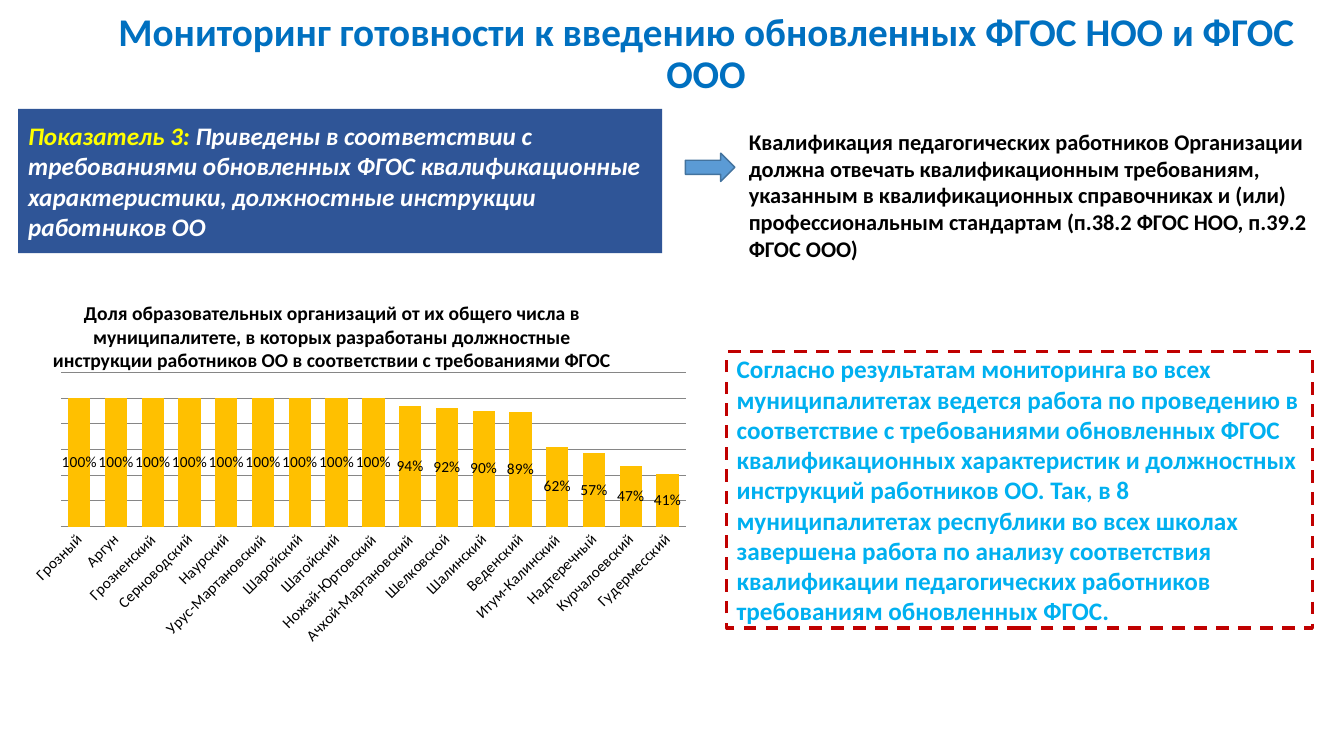
import pptx
import pptx.chart.data
import pptx.dml.color
import pptx.enum.chart
import pptx.enum.dml
import pptx.enum.shapes
import pptx.enum.text
import pptx.oxml
import pptx.util
from pptx.util import Pt

TITLE = "Мониторинг готовности к введению обновленных ФГОС НОО и ФГОС ООО"
INDICATOR = [
    ("Показатель 3: ", "yellow"),
    ("Приведены в соответствии с требованиями обновленных ФГОС квалификационные "
     "характеристики, должностные инструкции работников ОО", "white"),
]
REQUIREMENT = (
    "Квалификация педагогических работников Организации должна отвечать "
    "квалификационным требованиям, указанным в квалификационных справочниках и (или) "
    "профессиональным стандартам (п.38.2 ФГОС НОО, п.39.2 ФГОС ООО)"
)
CONCLUSION = (
    "Согласно результатам мониторинга во всех муниципалитетах ведется работа по "
    "проведению в соответствие с требованиями обновленных ФГОС квалификационных "
    "характеристик и должностных инструкций работников ОО. Так, в 8 муниципалитетах "
    "республики во всех школах завершена работа по анализу соответствия квалификации "
    "педагогических работников требованиям обновленных ФГОС."
)
CHART_TITLE = (
    "Доля образовательных организаций от их общего числа в муниципалитете, в которых "
    "разработаны должностные инструкции работников ОО в соответствии с требованиями ФГОС"
)
SHARES = {
    "Грозный": 1, "Аргун": 1, "Грозненский": 1, "Серноводский": 1, "Наурский": 1,
    "Урус-Мартановский": 1, "Шаройский": 1, "Шатойский": 1, "Ножай-Юртовский": 1,
    "Ачхой-Мартановский": 0.94, "Шелковской": 0.92, "Шалинский": 0.9,
    "Веденский": 0.89, "Итум-Калинский": 0.62, "Надтеречный": 0.57,
    "Курчалоевский": 0.47, "Гудермесский": 0.41,
}

THEME = {
    "font": "Calibri",
    "colours": {
        "title": "0070C0", "panel": "2F5597", "yellow": "FFFF00", "white": "FFFFFF",
        "black": "000000", "arrow": "5B9BD5", "arrow edge": "43739E", "bar": "FFC000",
        "grid": "868686", "border": "C00000", "conclusion": "00B0F0",
    },
    "sizes": {"title": 28, "large": 18, "body": 16, "caption": 14, "chart": 11},
}

# left, top, width, height in points
BOXES = {
    "title": (62.6, 11.5, 883.4, 55.4),
    "indicator": (13, 77.8, 460, 103),
    "requirement": (527.8, 79.2, 418.3, 120.2),
    "arrow": (489.6, 109.4, 35.3, 20.2),
    "chart": (14.4, 262, 485.3, 203.8),
    "conclusion": (519.1, 251.3, 418.3, 197.3),
    "chart title": (28, 215.3, 418.3, 49.7),
}
PLOT_AREA = {"x": 0.06, "y": 0.02, "w": 0.92, "h": 0.54}


def colour(name):
    return pptx.dml.color.RGBColor.from_string(THEME["colours"][name])


def place(name):
    return [Pt(length) for length in BOXES[name]]


def add_block(page, name, kind="RECTANGLE", fill=None, edge=None, edge_width=1, dash=None):
    block = page.shapes.add_shape(
        getattr(pptx.enum.shapes.MSO_SHAPE, kind), *place(name))
    block.shadow.inherit = False
    if fill:
        block.fill.solid()
        block.fill.fore_color.rgb = colour(fill)
    else:
        block.fill.background()
    if edge:
        block.line.color.rgb = colour(edge)
        block.line.width = Pt(edge_width)
        block.line.dash_style = dash
    else:
        block.line.fill.background()
    return block


def write(box, spans, size, bold=True, italic=False, align="LEFT", spacing=1.0):
    """Fill the box with one paragraph of (text, colour name) spans."""
    frame = box.text_frame
    frame.word_wrap = True
    frame.vertical_anchor = pptx.enum.text.MSO_ANCHOR.MIDDLE
    para = frame.paragraphs[0]
    para.alignment = getattr(pptx.enum.text.PP_ALIGN, align)
    para.line_spacing = spacing
    for text, colour_name in spans:
        span = para.add_run()
        span.text = text
        span.font.name = THEME["font"]
        span.font.size = Pt(THEME["sizes"][size])
        span.font.bold = bold
        span.font.italic = italic
        span.font.color.rgb = colour(colour_name)


def fix_plot_area(chart):
    """Pin the inner plot area to fractions of the chart."""
    modes = "".join(f'<c:{side}Mode val="edge"/>' for side in "xy")
    values = "".join(f'<c:{key} val="{part}"/>' for key, part in PLOT_AREA.items())
    layout = pptx.oxml.parse_xml(
        '<c:layout xmlns:c="http://schemas.openxmlformats.org/drawingml/2006/chart">'
        f'<c:manualLayout><c:layoutTarget val="inner"/>{modes}{values}'
        '</c:manualLayout></c:layout>')
    plot_area = chart._chartSpace.chart.plotArea
    for old in plot_area.xpath("c:layout"):
        plot_area.remove(old)
    plot_area.insert(0, layout)


def add_share_chart(page):
    enums = pptx.enum.chart
    data = pptx.chart.data.CategoryChartData(number_format="0%")
    data.categories = list(SHARES)
    data.add_series("Series 1", list(SHARES.values()))
    chart = page.shapes.add_chart(
        enums.XL_CHART_TYPE.COLUMN_CLUSTERED, *place("chart"), data).chart
    chart.has_legend = False
    chart.has_title = False
    chart.font.name = THEME["font"]
    chart.font.size = Pt(THEME["sizes"]["chart"])
    chart.font.color.rgb = colour("black")
    fix_plot_area(chart)

    plot = chart.plots[0]
    plot.gap_width = 65
    plot.vary_by_categories = False
    bars = plot.series[0].format.fill
    bars.solid()
    bars.fore_color.rgb = colour("bar")
    plot.has_data_labels = True
    labels = plot.data_labels
    labels.show_value = True
    labels.position = enums.XL_LABEL_POSITION.CENTER
    labels.number_format = "0%"
    labels.number_format_is_linked = False

    shares = chart.value_axis
    shares.visible = False
    shares.minimum_scale, shares.maximum_scale, shares.major_unit = 0, 1.2, 0.2
    shares.has_major_gridlines = True
    districts = chart.category_axis
    districts.major_tick_mark = enums.XL_TICK_MARK.NONE
    districts.tick_labels.font.size = Pt(THEME["sizes"]["chart"])
    districts._element.txPr.bodyPr.set("rot", "-2700000")
    for line in (shares.major_gridlines.format.line, districts.format.line):
        line.color.rgb = colour("grid")
        line.width = Pt(0.75)


def main():
    deck = pptx.Presentation()
    deck.slide_width, deck.slide_height = Pt(960), Pt(540)
    page = deck.slides.add_slide(deck.slide_layouts[6])

    write(add_block(page, "indicator", fill="panel"), INDICATOR, "large", italic=True)
    write(page.shapes.add_textbox(*place("title")), [(TITLE, "title")], "title",
          align="CENTER", spacing=0.9)
    write(add_block(page, "requirement", fill="white"), [(REQUIREMENT, "black")], "body")
    add_block(page, "arrow", kind="RIGHT_ARROW", fill="arrow", edge="arrow edge")
    add_share_chart(page)
    conclusion = add_block(page, "conclusion", fill="white", edge="border",
                           edge_width=2.25, dash=pptx.enum.dml.MSO_LINE.DASH)
    write(conclusion, [(CONCLUSION, "conclusion")], "large")
    write(add_block(page, "chart title", fill="white"), [(CHART_TITLE, "black")],
          "caption", align="CENTER")
    deck.save("out.pptx")


if __name__ == "__main__":
    main()
